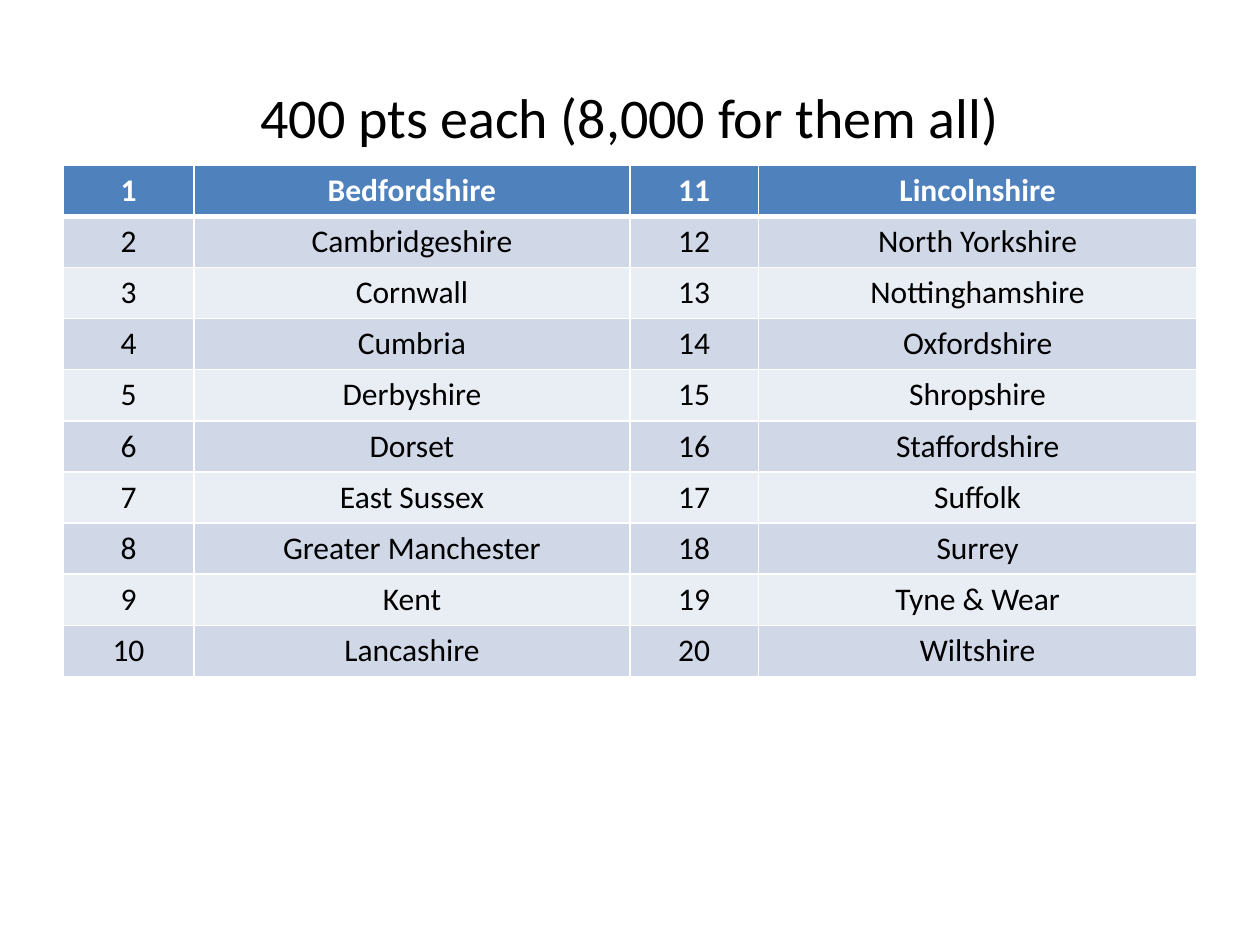
from lxml.etree import SubElement
from pptx import Presentation
from pptx.dml.color import RGBColor as RGB
from pptx.enum.text import MSO_ANCHOR as ANCHOR, PP_ALIGN as ALIGN
from pptx.oxml.ns import qn
from pptx.util import Inches, Pt

TITLE = "400 pts each (8,000 for them all)"
COUNTIES = [
    "Bedfordshire", "Cambridgeshire", "Cornwall", "Cumbria", "Derbyshire",
    "Dorset", "East Sussex", "Greater Manchester", "Kent", "Lancashire",
    "Lincolnshire", "North Yorkshire", "Nottinghamshire", "Oxfordshire", "Shropshire",
    "Staffordshire", "Suffolk", "Surrey", "Tyne & Wear", "Wiltshire",
]
COLORS = {"text": "000000", "white": "FFFFFF", "header": "4F81BD",
          "dark_band": "D0D8E8", "light_band": "E9EDF4"}
COL_WIDTHS = [1.04, 3.46, 1.02, 3.48]
ROWS = len(COUNTIES) // 2
TABLE_HEIGHT = 4.06


def write(tf, text, size=18, color="text", bold=False):
    p = tf.paragraphs[0]
    p.alignment = ALIGN.CENTER
    r = p.add_run()
    r.text = text
    r.font.name = "Calibri"
    r.font.size = Pt(size)
    r.font.bold = bold
    r.font.color.rgb = RGB.from_string(COLORS[color])


def add_borders(cell, **widths):
    tc_pr = cell._tc.get_or_add_tcPr()
    for side in "LRTB":
        ln = SubElement(tc_pr, qn(f"a:ln{side}"), w=str(Pt(widths.get(side, 1))))
        fill = SubElement(ln, qn("a:solidFill"))
        SubElement(fill, qn("a:srgbClr"), val=COLORS["white"])


def add_title(s):
    tf = s.shapes.add_textbox(Inches(0.5), Inches(0.3), Inches(9), Inches(1.25)).text_frame
    tf.word_wrap = True
    tf.vertical_anchor = ANCHOR.MIDDLE
    write(tf, TITLE, size=32)


def add_county_table(s):
    table = s.shapes.add_table(ROWS, len(COL_WIDTHS), Inches(0.5), Inches(1.31),
                               Inches(sum(COL_WIDTHS)), Inches(TABLE_HEIGHT)).table
    for col, width in zip(table.columns, COL_WIDTHS):
        col.width = Inches(width)
    for i, row in enumerate(table.rows):
        row.height = Inches(TABLE_HEIGHT / ROWS)
        header = i == 0
        band = "header" if header else "dark_band" if i % 2 else "light_band"
        values = [str(i + 1), COUNTIES[i], str(i + 1 + ROWS), COUNTIES[i + ROWS]]
        for cell, value in zip(row.cells, values):
            add_borders(cell, T=3 if i == 1 else 1, B=3 if header else 1)
            cell.fill.solid()
            cell.fill.fore_color.rgb = RGB.from_string(COLORS[band])
            write(cell.text_frame, value, color="white" if header else "text", bold=header)


def main():
    prs = Presentation()
    prs.slide_width, prs.slide_height = Inches(10), Inches(7.5)
    s = prs.slides.add_slide(prs.slide_layouts[6])
    add_title(s)
    add_county_table(s)
    prs.save("out.pptx")


if __name__ == "__main__":
    main()
